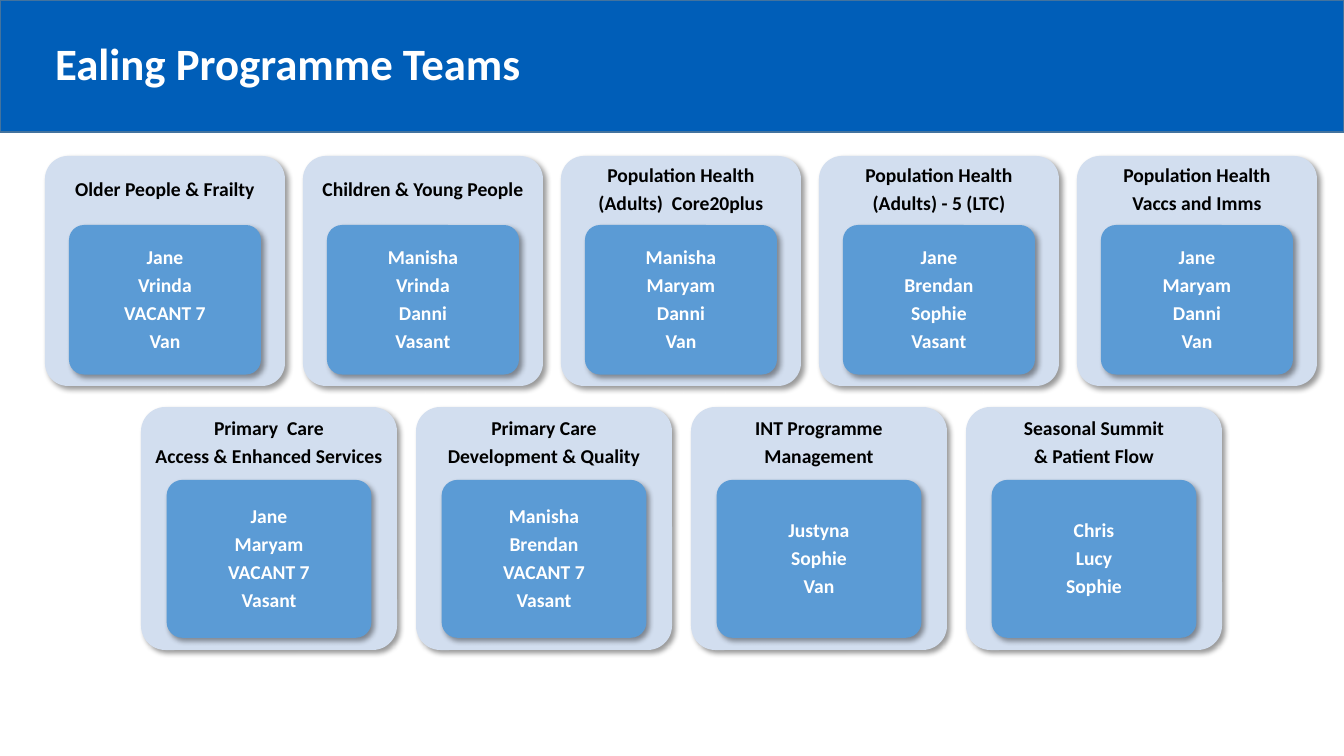
from dataclasses import dataclass

from lxml.etree import SubElement
from pptx import Presentation
from pptx.dml.color import RGBColor as Rgb
from pptx.enum.shapes import MSO_SHAPE as Kind
from pptx.enum.text import MSO_ANCHOR as Anchor, MSO_AUTO_SIZE as Fit, PP_ALIGN as Align
from pptx.oxml.ns import qn
from pptx.util import Emu, Pt


@dataclass(frozen=True)
class Theme:
    font: str = "Calibri"
    blue: str = "005EB8"
    edge: str = "43739E"
    card: str = "D2DEEF"
    tile: str = "5B9BD5"
    dark: str = "000000"
    light: str = "FFFFFF"
    head: int = 32
    body: int = 14


THEME = Theme()
WIDE, HIGH = 1344, 756
SCALE = 12192000 / WIDE

# Each team: heading lines, then members
TOP = [
    (["Older People & Frailty"], ["Jane", "Vrinda", "VACANT 7", "Van"]),
    (["Children & Young People"], ["Manisha", "Vrinda", "Danni", "Vasant"]),
    (["Population Health", "(Adults)  Core20plus"], ["Manisha", "Maryam", "Danni", "Van"]),
    (["Population Health", "(Adults) - 5 (LTC)"], ["Jane", "Brendan", "Sophie", "Vasant"]),
    (["Population Health", "Vaccs and Imms"], ["Jane", "Maryam", "Danni", "Van"]),
]
LOW = [
    (["Primary  Care", "Access & Enhanced Services"], ["Jane", "Maryam", "VACANT 7", "Vasant"]),
    (["Primary Care", "Development & Quality"], ["Manisha", "Brendan", "VACANT 7", "Vasant"]),
    (["INT Programme", "Management"], ["Justyna", "Sophie", "Van"]),
    (["Seasonal Summit", "& Patient Flow"], ["Chris", "Lucy", "Sophie"]),
]


def px(*nums):
    return [Emu(round(n * SCALE)) for n in nums]


def style(para, size, color):
    para.line_spacing = 0.9
    font = para.font
    font.name, font.size, font.bold = THEME.font, Pt(size), True
    font.color.rgb = Rgb.from_string(color)


def write(shape, lines, color, inset):
    frame = shape.text_frame
    frame.word_wrap = True
    frame.vertical_anchor = Anchor.MIDDLE
    gap, = px(inset)
    frame.margin_left = frame.margin_right = gap
    frame.margin_top = frame.margin_bottom = gap
    frame.text = "\n".join(lines)
    for para in frame.paragraphs:
        para.alignment = Align.CENTER
        para.space_after = Pt(THEME.body * 0.35)
        style(para, THEME.body, color)


def shade(shape):
    shape.shadow.inherit = False
    effects = shape.element.spPr.find(qn("a:effectLst"))
    drop = SubElement(effects, qn("a:outerShdw"), blurRad=str(Pt(4)), dist=str(Pt(3)),
                      dir="2700000", algn="tl", rotWithShape="0")
    tint = SubElement(drop, qn("a:srgbClr"), val=THEME.dark)
    SubElement(tint, qn("a:alpha"), val="40000")


def panel(group, box, color):
    shape = group.shapes.add_shape(Kind.ROUNDED_RECTANGLE, *px(*box))
    shape.adjustments[0] = 0.1
    shape.fill.solid()
    shape.fill.fore_color.rgb = Rgb.from_string(color)
    shape.line.fill.background()
    shade(shape)
    return shape


def banner(slide, box):
    x, y, w, h = box
    title = slide.shapes.title
    # Blue band, placed behind the title
    band = slide.shapes.add_shape(Kind.RECTANGLE, *px(*box))
    band.shadow.inherit = False
    band.fill.solid()
    band.fill.fore_color.rgb = Rgb.from_string(THEME.blue)
    band.line.color.rgb = Rgb.from_string(THEME.edge)
    band.line.width = Pt(1)
    title.element.addprevious(band.element)
    # Title
    title.left, title.top, title.width, title.height = px(x + 45, y + 36, w - 90, h - 72)
    frame = title.text_frame
    frame.text = "Ealing Programme Teams"
    frame.auto_size = Fit.NONE
    frame.vertical_anchor = Anchor.MIDDLE
    para = frame.paragraphs[0]
    para.alignment = Align.LEFT
    style(para, THEME.head, THEME.light)


def team(group, box, head, names):
    x, y, w, h = box
    top = 0.3 * h
    panel(group, box, THEME.card)
    # Heading in the top part of the card
    label = group.shapes.add_textbox(*px(x, y, w, top))
    write(label, head, THEME.dark, 6)
    # Members in the tile below
    tile = panel(group, (x + 0.1 * w, y + top, 0.8 * w, 0.65 * h), THEME.tile)
    write(tile, names, THEME.light, 8)


def row(slide, box, gap, teams):
    x, y, w, h = box
    group = slide.shapes.add_group_shape()
    wide = (w - gap * (len(teams) - 1)) / len(teams)
    for i, (head, names) in enumerate(teams):
        team(group, (x + i * (wide + gap), y, wide, h), head, names)


def main():
    deck = Presentation()
    deck.slide_width, deck.slide_height = px(WIDE, HIGH)
    slide = deck.slides.add_slide(deck.slide_layouts[5])
    banner(slide, (0, 0, WIDE, 132))
    row(slide, (45, 156, 1272, 230), 18, TOP)
    row(slide, (141, 407, 1081, 243), 19, LOW)
    deck.save("out.pptx")


if __name__ == "__main__":
    main()
